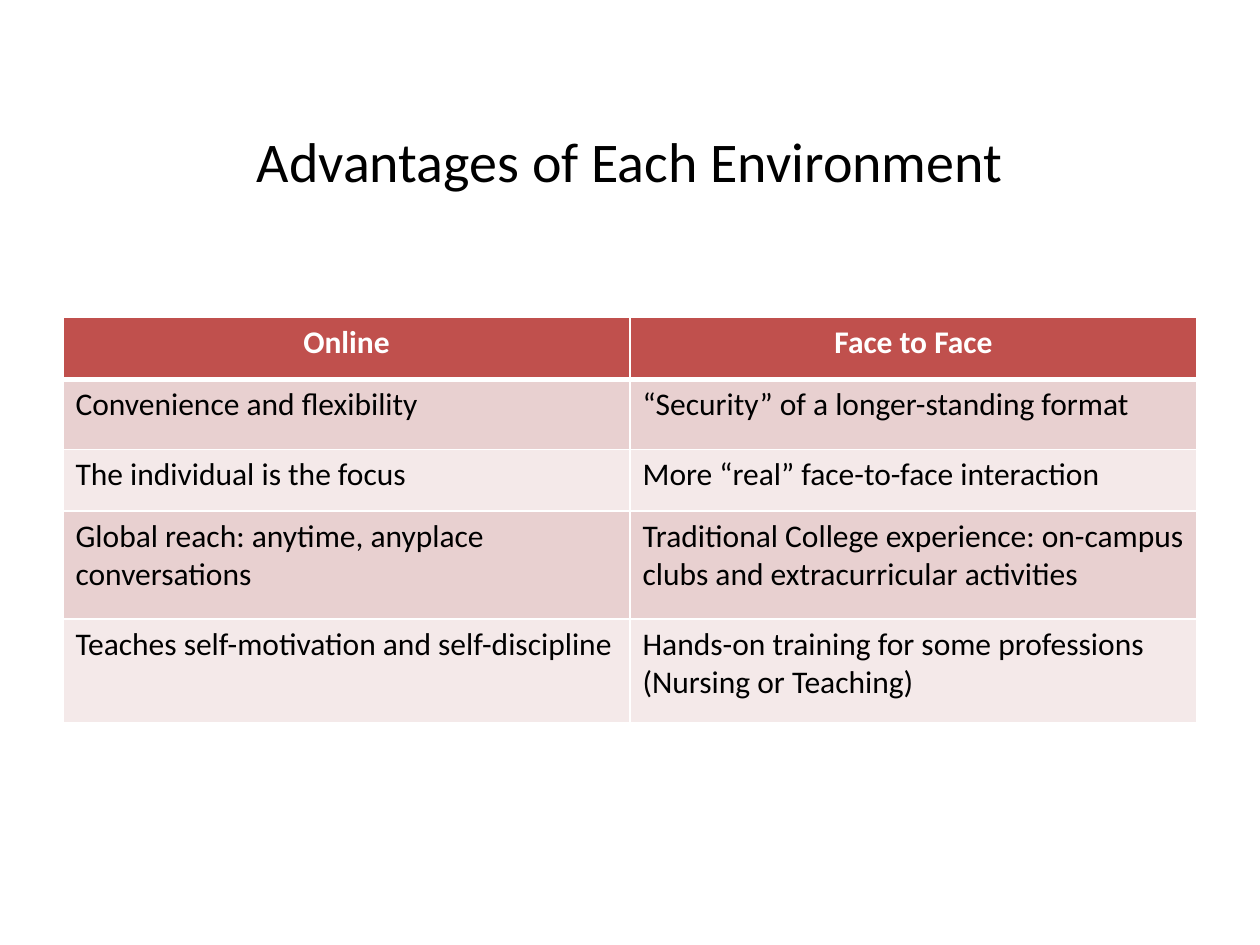
from dataclasses import dataclass

from lxml.etree import SubElement as Sub
from pptx import Presentation
from pptx.dml.color import RGBColor
from pptx.enum.text import MSO_ANCHOR as Anchor, PP_ALIGN as Align
from pptx.oxml.ns import qn
from pptx.util import Pt

FONT = "Calibri"
BLACK = RGBColor(0, 0, 0)
WHITE = RGBColor(255, 255, 255)
RED = RGBColor(0xC0, 0x50, 0x4D)
ROSE = RGBColor(0xE8, 0xD0, 0xD0)
PALE = RGBColor(0xF4, 0xE9, 0xE9)

LEFT, WIDTH = 36, 648
THIN, THICK = 1, 3


@dataclass
class Row:
    online: str
    face: str
    height: float


ROWS = [
    Row("Online", "Face to Face", 35.2),
    Row("Convenience and flexibility",
        "“Security” of a longer-standing format", 40.2),
    Row("The individual is the focus",
        "More “real” face-to-face interaction", 35.2),
    Row("Global reach: anytime, anyplace conversations",
        "Traditional College experience: on-campus clubs and "
        "extracurricular activities", 61.8),
    Row("Teaches self-motivation and self-discipline",
        "Hands-on training for some professions (Nursing or Teaching)", 59.4),
]


def write(frame, text: str, *, size: float = 18, color: RGBColor = BLACK,
          bold: bool = False, align: Align = Align.LEFT) -> None:
    frame.word_wrap = True
    para = frame.paragraphs[0]
    para.alignment = align
    run = para.add_run()
    run.text = text
    font = run.font
    font.name, font.size, font.bold = FONT, Pt(size), bold
    font.color.rgb = color


def edge(cell, top: float, base: float) -> None:
    """Add white borders; call before the fill is set."""
    props = cell._tc.get_or_add_tcPr()
    for side, width in (("L", THIN), ("R", THIN), ("T", top), ("B", base)):
        line = Sub(props, qn(f"a:ln{side}"), w=str(Pt(width)))
        fill = Sub(line, qn("a:solidFill"))
        Sub(fill, qn("a:srgbClr"), val=str(WHITE))


def draw_row(table, index: int, row: Row) -> None:
    head = index == 0
    table.rows[index].height = Pt(row.height)
    shade = RED if head else (ROSE if index % 2 else PALE)
    for col, text in enumerate((row.online, row.face)):
        cell = table.cell(index, col)
        edge(cell, THICK if index == 1 else THIN, THICK if head else THIN)
        cell.fill.solid()
        cell.fill.fore_color.rgb = shade
        write(cell.text_frame, text, bold=head,
              color=WHITE if head else BLACK,
              align=Align.CENTER if head else Align.LEFT)


def main() -> None:
    deck = Presentation()
    deck.slide_width, deck.slide_height = Pt(720), Pt(540)
    slide = deck.slides.add_slide(deck.slide_layouts[5])

    # Title
    title = slide.shapes.title
    title.left, title.top = Pt(LEFT), Pt(64.8)
    title.width, title.height = Pt(WIDTH), Pt(53.3)
    title.text_frame.vertical_anchor = Anchor.MIDDLE
    write(title.text_frame, "Advantages of Each Environment",
          size=32, align=Align.CENTER)

    # Comparison table
    height = sum(row.height for row in ROWS)
    table = slide.shapes.add_table(len(ROWS), 2, Pt(LEFT), Pt(181.5),
                                   Pt(WIDTH), Pt(height)).table
    for index, row in enumerate(ROWS):
        draw_row(table, index, row)

    deck.save("out.pptx")


if __name__ == "__main__":
    main()
